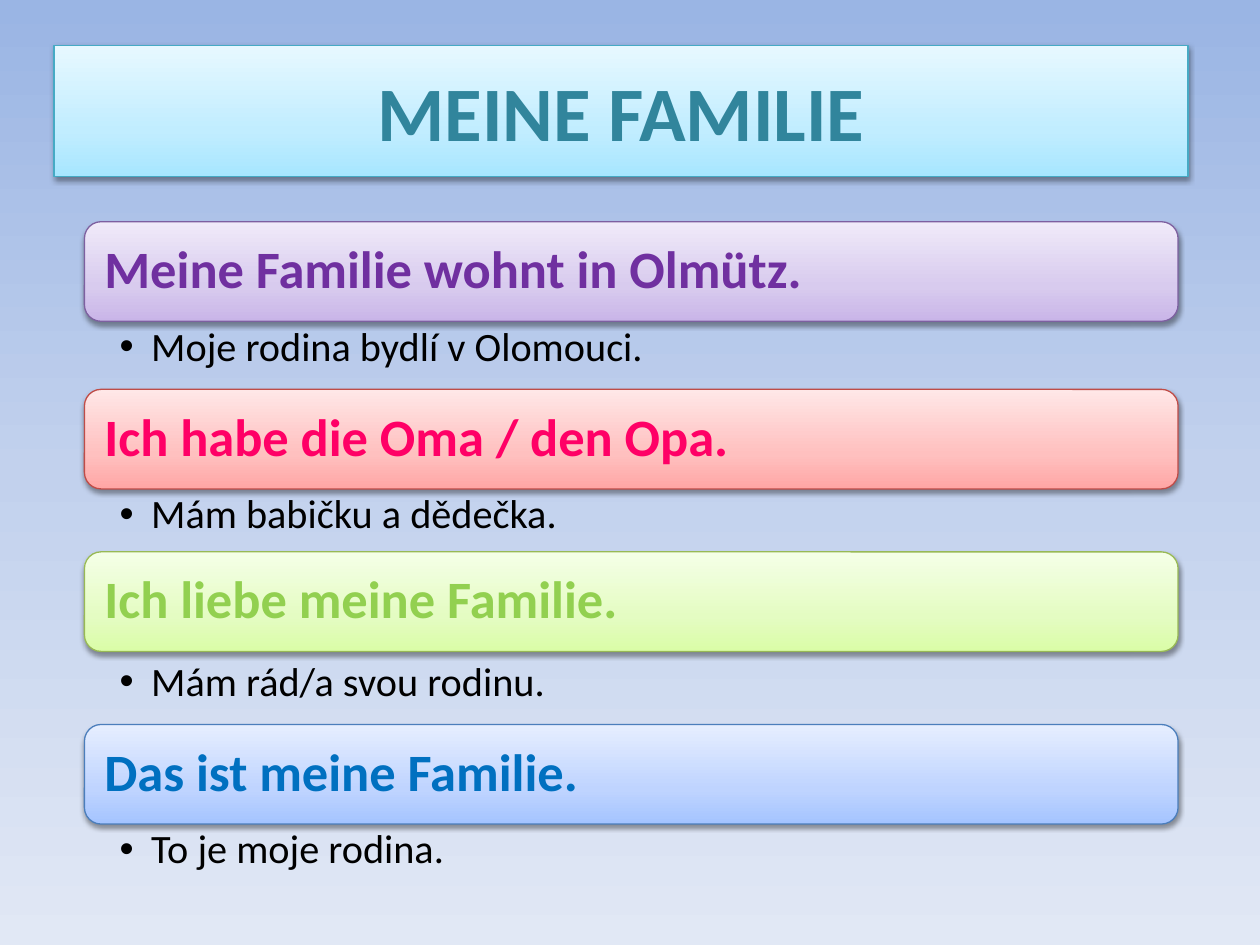
from typing import NamedTuple

from lxml.etree import SubElement
from pptx import Presentation
from pptx.dml.color import RGBColor
from pptx.enum.shapes import MSO_SHAPE as Preset
from pptx.enum.text import MSO_ANCHOR as Anchor, PP_ALIGN as Align
from pptx.oxml.ns import qn
from pptx.util import Inches, Pt

WIDTH, HEIGHT = 10, 7.5
LEFT, COLUMN_WIDTH = 0.67, 8.68
FIRST_ROW, ROW_PITCH = 1.76, 1.33
BAR_HEIGHT, TRANSLATION_HEIGHT = 0.79, 0.54
BAR_STOPS = (0, 35, 100)
UPWARD, DOWNWARD = 90, 270


class Palette(NamedTuple):
    shades: tuple[str, str, str]
    outline: str
    text: str


class Sentence(NamedTuple):
    german: str
    czech: str
    palette: Palette
    bar_shift: float = 0


TITLE_PALETTE = Palette(("A7E6FF", "C1EDFF", "E7F8FF"), "46AAC5", "31859C")
SENTENCES = [
    Sentence("Meine Familie wohnt in Olmütz.", "Moje rodina bydlí v Olomouci.",
             Palette(("C9B5E8", "D8CBEE", "F0EAF9"), "7D60A0", "7030A0")),
    Sentence("Ich habe die Oma / den Opa.", "Mám babičku a dědečka.",
             Palette(("FFA6A5", "FFC0BF", "FFE7E7"), "BF4C48", "FF0066")),
    Sentence("Ich liebe meine Familie.", "Mám rád/a svou rodinu.",
             Palette(("DAFDA7", "E4FCC2", "F5FFE7"), "98B955", "92D050"), -0.04),
    Sentence("Das ist meine Familie.", "To je moje rodina.",
             Palette(("A4C4FF", "BFD4FF", "E6EEFF"), "4B7EBC", "0070C0")),
]


def rgb(hex_colour: str) -> RGBColor:
    return RGBColor.from_string(hex_colour)


def paint_gradient(owner, fill, shades: tuple, stops: tuple, angle: int) -> None:
    """Give the fill a linear gradient with any number of stops."""
    fill.gradient()
    fill.gradient_angle = angle
    stop_list = owner.element.find(".//" + qn("a:gsLst"))
    for old_stop in list(stop_list):
        stop_list.remove(old_stop)
    for shade, percent in zip(shades, stops):
        stop = SubElement(stop_list, qn("a:gs"), pos=str(percent * 1000))
        SubElement(stop, qn("a:srgbClr"), val=shade)


def cast_shadow(shape) -> None:
    shape.shadow.inherit = False
    effects = shape.element.spPr.find(qn("a:effectLst"))
    shadow = SubElement(effects, qn("a:outerShdw"), blurRad=str(Pt(3.1)),
                        dist=str(Pt(1.6)), dir="5400000", rotWithShape="0")
    colour = SubElement(shadow, qn("a:srgbClr"), val="000000")
    SubElement(colour, qn("a:alpha"), val="38000")


def write(shape, text: str, size: float, colour: str, bold: bool, anchor: Anchor,
          insets: tuple[float, float, float, float]):
    """Write one paragraph; insets run left, top, right, bottom."""
    frame = shape.text_frame
    frame.word_wrap = True
    frame.vertical_anchor = anchor
    (frame.margin_left, frame.margin_top,
     frame.margin_right, frame.margin_bottom) = map(Inches, insets)
    paragraph = frame.paragraphs[0]
    run = paragraph.add_run()
    run.text = text
    run.font.name = "Calibri"
    run.font.size = Pt(size)
    run.font.bold = bold
    run.font.color.rgb = rgb(colour)
    return paragraph


def add_panel(slide, preset: Preset, box: tuple, palette: Palette):
    panel = slide.shapes.add_shape(preset, *map(Inches, box))
    paint_gradient(panel, panel.fill, palette.shades, BAR_STOPS, UPWARD)
    panel.line.color.rgb = rgb(palette.outline)
    panel.line.width = Pt(0.75)
    cast_shadow(panel)
    return panel


def add_title(slide, text: str) -> None:
    panel = add_panel(slide, Preset.RECTANGLE, (0.43, 0.36, 9, 1.04), TITLE_PALETTE)
    paragraph = write(panel, text, 44, TITLE_PALETTE.text, True, Anchor.MIDDLE,
                      (0.1, 0.05, 0.1, 0.05))
    paragraph.alignment = Align.CENTER


def add_sentence(slide, sentence: Sentence, row: int) -> None:
    top = FIRST_ROW + row * ROW_PITCH
    bar = add_panel(slide, Preset.ROUNDED_RECTANGLE,
                    (LEFT, top + sentence.bar_shift, COLUMN_WIDTH, BAR_HEIGHT),
                    sentence.palette)
    german = write(bar, sentence.german, 30, sentence.palette.text, True,
                   Anchor.MIDDLE, (0.12, 0.12, 0.12, 0.12))
    german.alignment = Align.LEFT
    german.line_spacing = 0.9

    translation = slide.shapes.add_textbox(
        *map(Inches, (LEFT, top + BAR_HEIGHT, COLUMN_WIDTH, TRANSLATION_HEIGHT)))
    czech = write(translation, sentence.czech, 23, "000000", False, Anchor.TOP,
                  (0.28, 0.04, 0.23, 0.04))
    czech.level = 1
    czech.line_spacing = 0.9
    properties = czech._p.get_or_add_pPr()
    properties.set("marL", str(Inches(0.25)))
    properties.set("indent", str(Inches(-0.25)))
    SubElement(properties, qn("a:buFont"), typeface="Arial")
    SubElement(properties, qn("a:buChar"), char="•")


def main() -> None:
    deck = Presentation()
    deck.slide_width, deck.slide_height = Inches(WIDTH), Inches(HEIGHT)
    slide = deck.slides.add_slide(deck.slide_layouts[6])
    paint_gradient(slide, slide.background.fill, ("9AB5E4", "C2D1ED", "E1E8F5"),
                   (0, 50, 100), DOWNWARD)
    add_title(slide, "MEINE FAMILIE")
    for row, sentence in enumerate(SENTENCES):
        add_sentence(slide, sentence, row)
    deck.save("out.pptx")


if __name__ == "__main__":
    main()
